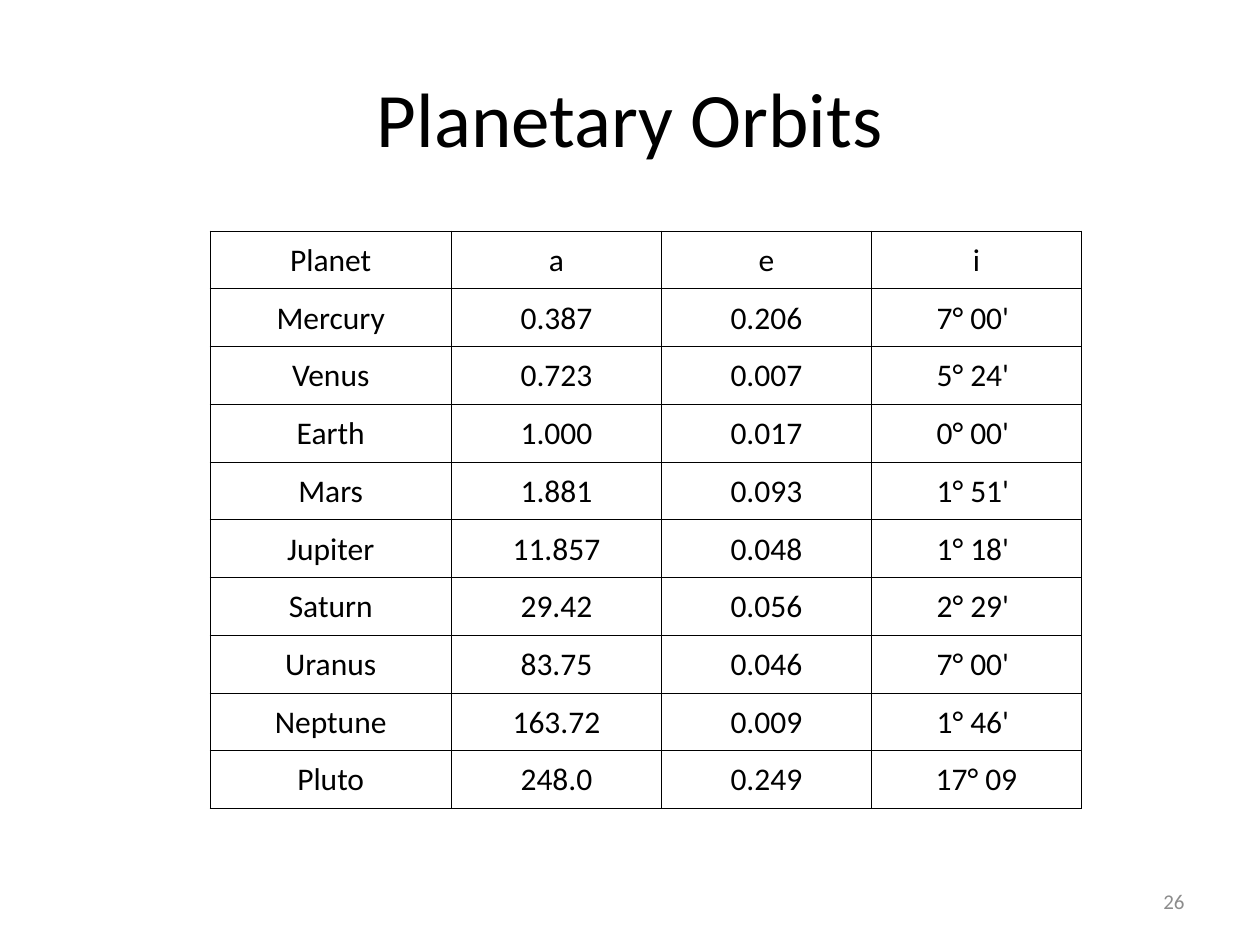
import pptx
import pptx.dml.color
import pptx.enum.text
import pptx.oxml
import pptx.oxml.ns
import pptx.util

COLUMNS, ROWS = 120, 90
ORBITS = [
    ("Planet", "a", "e", "i"),
    ("Mercury", "0.387", "0.206", "7° 00' "),
    ("Venus", "0.723", "0.007", "5° 24' "),
    ("Earth", "1.000", "0.017", "0° 00' "),
    ("Mars", "1.881", "0.093", "1° 51' "),
    ("Jupiter", "11.857", "0.048", "1° 18' "),
    ("Saturn", "29.42", "0.056", "2° 29' "),
    ("Uranus", "83.75", "0.046", "7° 00' "),
    ("Neptune", "163.72", "0.009", "1° 46' "),
    ("Pluto", "248.0", "0.249", "17° 09"),
]


def color(value):
    return pptx.dml.color.RGBColor.from_string(value)


class Deck:
    font = "Calibri"
    ink = "000000"
    muted = "8C8C8C"
    align = pptx.enum.text.PP_ALIGN

    def __init__(self):
        self.deck = pptx.Presentation()
        self.deck.slide_width = pptx.util.Inches(10)
        self.deck.slide_height = pptx.util.Inches(7.5)
        self.slide = self.deck.slides.add_slide(self.deck.slide_layouts[5])

    def x(self, columns):
        return round(self.deck.slide_width * columns / COLUMNS)

    def y(self, rows):
        return round(self.deck.slide_height * rows / ROWS)

    def box(self, left, top, width, height):
        return self.x(left), self.y(top), self.x(width), self.y(height)

    def set_text(self, frame, text, size, ink, align):
        frame.text = text
        frame.word_wrap = True
        frame.vertical_anchor = pptx.enum.text.MSO_ANCHOR.MIDDLE
        self.style(frame.paragraphs[0], size, ink, align)

    def style(self, paragraph, size, ink, align):
        paragraph.alignment = align
        paragraph.font.name = self.font
        paragraph.font.size = pptx.util.Pt(size)
        paragraph.font.color.rgb = color(ink)

    def title(self, text, *place):
        heading = self.slide.shapes.title
        heading.left, heading.top, heading.width, heading.height = self.box(*place)
        self.set_text(heading.text_frame, text, 44, self.ink, self.align.CENTER)

    def page_number(self, text, *place):
        number = self.slide.shapes.add_textbox(*self.box(*place))
        self.set_text(number.text_frame, text, 12, self.muted, self.align.RIGHT)

    def table(self, records, left, top, widths, row_height):
        place = self.box(left, top, sum(widths), row_height * len(records))
        table = self.slide.shapes.add_table(len(records), len(widths), *place).table
        table.first_row = table.horz_banding = False
        for column, width in zip(table.columns, widths):
            column.width = self.x(width)
        for row, record in zip(table.rows, records):
            row.height = self.y(row_height)
            for cell, text in zip(row.cells, record):
                self.cell(cell, text)

    def cell(self, cell, text):
        cell.text = text
        cell.vertical_anchor = pptx.enum.text.MSO_ANCHOR.MIDDLE
        cell.margin_left = cell.margin_right = cell.margin_top = pptx.util.Inches(0.01)
        cell.margin_bottom = 0
        self.style(cell.text_frame.paragraphs[0], 18, self.ink, self.align.CENTER)
        cell.fill.background()
        properties = cell._tc.get_or_add_tcPr()
        for index, side in enumerate("LRTB"):
            properties.insert(index, pptx.oxml.parse_xml(
                f'<a:ln{side} {pptx.oxml.ns.nsdecls("a")} w="{pptx.util.Pt(0.5)}">'
                f'<a:solidFill><a:srgbClr val="{self.ink}"/></a:solidFill></a:ln{side}>'))

    def save(self):
        self.deck.save("out.pptx")


def main():
    deck = Deck()
    deck.title("Planetary Orbits", 6, 3.6, 108, 15)
    deck.page_number("26", 86, 83.4, 28, 4.8)
    deck.table(ORBITS, 20, 22, (23, 20, 20, 20), 5.5)
    deck.save()


if __name__ == "__main__":
    main()
